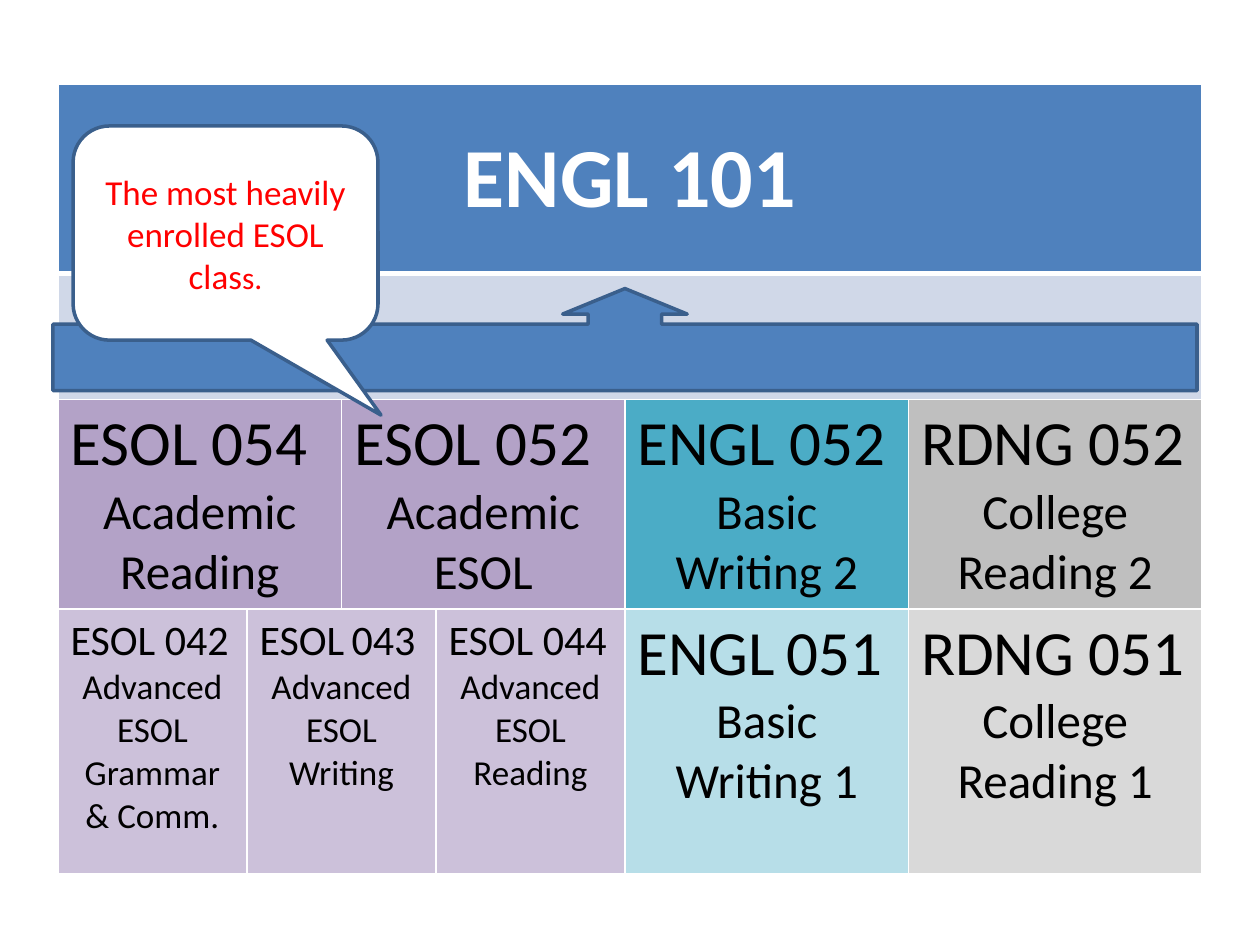
from lxml import etree
from pptx import Presentation
from pptx.dml.color import RGBColor
from pptx.enum import shapes, text
from pptx.oxml.ns import qn
from pptx.util import Inches, Pt

BLUE = RGBColor(0x4F, 0x81, 0xBD)
OUTLINE = RGBColor(0x3A, 0x5F, 0x8C)
PALE_BLUE = RGBColor(0xD0, 0xD8, 0xE8)
PURPLE = RGBColor(0xB3, 0xA2, 0xC7)
LILAC = RGBColor(0xCC, 0xC1, 0xDA)
TEAL = RGBColor(0x4B, 0xAC, 0xC6)
PALE_TEAL = RGBColor(0xB7, 0xDE, 0xE8)
GRAY = RGBColor(0xBF, 0xBF, 0xBF)
PALE_GRAY = RGBColor(0xD9, 0xD9, 0xD9)
WHITE = RGBColor(0xFF, 0xFF, 0xFF)
BLACK = RGBColor(0, 0, 0)
RED = RGBColor(0xFF, 0, 0)

COLUMN_WIDTHS = [1.5, 0.75, 0.75, 1.5, 2.25, 2.33]
ROW_HEIGHTS = [1.5, 1, 1.63, 2.1]

# Courses: row, first column, last column, fill, code runs, code size, title lines, title size
COURSES = [
    (2, 0, 1, PURPLE, [("ESOL 054", 36)], ["Academic Reading"], 28),
    (2, 2, 3, PURPLE, [("ESOL 052", 36)], ["Academic ESOL"], 28),
    (2, 4, 4, TEAL, [("ENGL 052", 36)], ["Basic Writing 2"], 28),
    (2, 5, 5, GRAY, [("RDNG 052", 36)], ["College Reading 2"], 28),
    (3, 0, 0, LILAC, [("ESOL 042", 24)], ["Advanced ESOL Grammar", "& Comm."], 20),
    (3, 1, 2, LILAC, [("ESOL", 24), (" ", 18), ("043", 24)], ["Advanced ESOL Writing"], 20),
    (3, 3, 3, LILAC, [("ESOL 044", 24)], ["Advanced ESOL Reading"], 20),
    (3, 4, 4, PALE_TEAL, [("ENGL", 36), (" ", 28), ("051", 36)], ["Basic Writing 1"], 28),
    (3, 5, 5, PALE_GRAY, [("RDNG 051", 36)], ["College Reading 1"], 28),
]
CALLOUT_RUNS = [("The most heavily enrolled ESOL clas", 20), ("s.", 18)]


def add_runs(paragraph, runs, color=BLACK, bold=False, align=text.PP_ALIGN.CENTER):
    paragraph.alignment = align
    for words, size in runs:
        run = paragraph.add_run()
        run.text = words
        run.font.name = "Calibri"
        run.font.size = Pt(size)
        run.font.bold = bold
        run.font.color.rgb = color


def set_borders(cell, top=1, bottom=1):
    properties = cell._tc.get_or_add_tcPr()
    sides = [("lnL", 1), ("lnR", 1), ("lnT", top), ("lnB", bottom)]
    for position, (side, width) in enumerate(sides):
        line = etree.Element(qn("a:" + side), w=str(Pt(width)))
        fill = etree.SubElement(line, qn("a:solidFill"))
        etree.SubElement(fill, qn("a:srgbClr"), val=str(WHITE))
        properties.insert(position, line)


def fill_cells(table, row, first, last, color):
    for column in range(first, last + 1):
        cell = table.cell(row, column)
        cell.fill.solid()
        cell.fill.fore_color.rgb = color
        set_borders(cell, top=3 if row == 1 else 1, bottom=3 if row == 0 else 1)
    origin = table.cell(row, first)
    if last > first:
        origin.merge(table.cell(row, last))
    return origin


def add_outlined_shape(slide, kind, box, fill, adjustments):
    shape = slide.shapes.add_shape(kind, *[Inches(length) for length in box])
    for index, value in enumerate(adjustments):
        shape.adjustments[index] = value
    shape.shadow.inherit = False
    shape.fill.solid()
    shape.fill.fore_color.rgb = fill
    shape.line.color.rgb = OUTLINE
    shape.line.width = Pt(2)
    return shape


presentation = Presentation()
presentation.slide_width, presentation.slide_height = Inches(10), Inches(7.5)
slide = presentation.slides.add_slide(presentation.slide_layouts[6])

# Course table
table = slide.shapes.add_table(
    len(ROW_HEIGHTS), len(COLUMN_WIDTHS), Inches(0.46), Inches(0.67),
    Inches(sum(COLUMN_WIDTHS)), Inches(sum(ROW_HEIGHTS))).table
for column, width in zip(table.columns, COLUMN_WIDTHS):
    column.width = Inches(width)
for row, height in zip(table.rows, ROW_HEIGHTS):
    row.height = Inches(height)

last_column = len(COLUMN_WIDTHS) - 1
header = fill_cells(table, 0, 0, last_column, BLUE)
header.vertical_anchor = text.MSO_ANCHOR.MIDDLE
add_runs(header.text_frame.paragraphs[0], [("ENGL 101", 48)], WHITE, bold=True)
fill_cells(table, 1, 0, last_column, PALE_BLUE)

for row, first, last, color, code_runs, titles, title_size in COURSES:
    frame = fill_cells(table, row, first, last, color).text_frame
    add_runs(frame.paragraphs[0], code_runs, align=text.PP_ALIGN.LEFT)
    for title in titles:
        add_runs(frame.add_paragraph(), [(title, title_size)])

# Arrow leading up to ENGL 101
add_outlined_shape(slide, shapes.MSO_SHAPE.UP_ARROW_CALLOUT, (0.42, 2.29, 9.08, 0.81),
                   BLUE, [0.72, 0.61, 0.25, 0.65])

# Speech bubble pointing at ESOL 052
bubble = add_outlined_shape(slide, shapes.MSO_SHAPE.ROUNDED_RECTANGULAR_CALLOUT,
                            (0.58, 1, 2.42, 1.7), WHITE, [0.51, 0.85, 0.17])
bubble.text_frame.word_wrap = True
bubble.text_frame.vertical_anchor = text.MSO_ANCHOR.MIDDLE
add_runs(bubble.text_frame.paragraphs[0], CALLOUT_RUNS, RED)

presentation.save("out.pptx")
